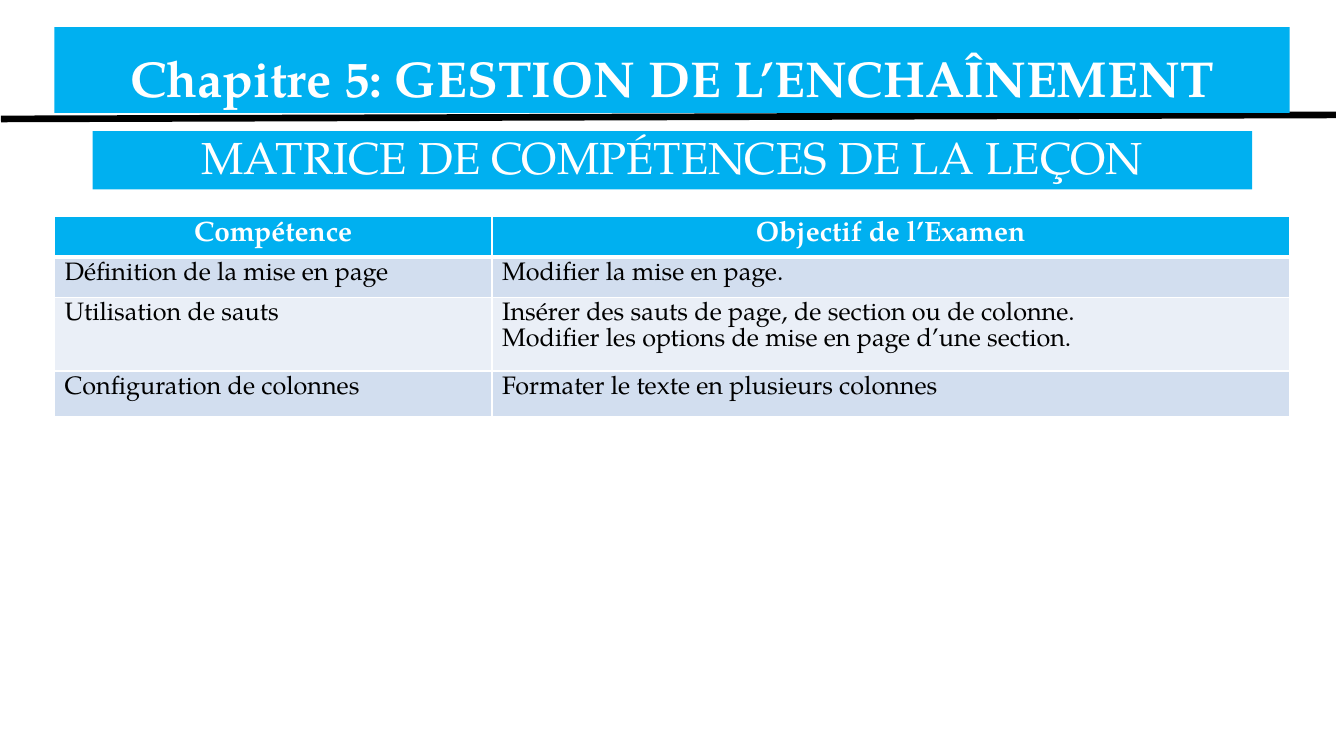
import pptx
import pptx.dml.color
import pptx.enum.shapes
import pptx.enum.text
import pptx.oxml
import pptx.oxml.ns
import pptx.oxml.xmlchemy
import pptx.util
from pptx.util import Inches

FONT = "TeX Gyre Pagella"
COLOURS = {
    "accent": "00B0F0",
    "white": "FFFFFF",
    "black": "000000",
    "odd row": "D2DEEF",
    "even row": "EAEFF7",
}
COLUMN_WIDTHS = [4.34, 7.91]
ROW_HEIGHTS = [0.4, 0.4, 0.73, 0.45]
SKILLS = [
    ("Compétence", "Objectif de l’Examen"),
    ("Définition de la mise en page", "Modifier la mise en page."),
    ("Utilisation de sauts",
     "Insérer des sauts de page, de section ou de colonne.\n"
     "Modifier les options de mise en page d’une section."),
    ("Configuration de colonnes", "Formater le texte en plusieurs colonnes"),
]


def rgb(name):
    return pptx.dml.color.RGBColor.from_string(COLOURS[name])


def paint(item, colour):
    item.fill.solid()
    item.fill.fore_color.rgb = rgb(colour)


def write(frame, text, size, colour, bold=False, align="CENTER", spacing=None):
    frame.text = text
    for para in frame.paragraphs:
        para.alignment = pptx.enum.text.PP_ALIGN[align]
        para.line_spacing = spacing
        for span in para.runs:
            span.font.name = FONT
            span.font.size = pptx.util.Pt(size)
            span.font.bold = bold
            span.font.color.rgb = rgb(colour)


def add_banner(page, left, top, width, height, text, size, bold, anchor):
    box = page.shapes.add_shape(
        pptx.enum.shapes.MSO_SHAPE.RECTANGLE,
        Inches(left), Inches(top), Inches(width), Inches(height))
    box.shadow.inherit = False
    paint(box, "accent")
    box.line.fill.background()
    box.text_frame.word_wrap = True
    box.text_frame.vertical_anchor = pptx.enum.text.MSO_ANCHOR[anchor]
    write(box.text_frame, text, size, "white", bold, spacing=0.9)


def add_rule(page, start, end):
    rule = page.shapes.add_connector(
        pptx.enum.shapes.MSO_CONNECTOR.STRAIGHT,
        *(Inches(value) for value in start + end))
    rule.line.color.rgb = rgb("black")
    rule.line.width = pptx.util.Pt(4.75)
    properties = rule._element.spPr
    properties.append(pptx.oxml.xmlchemy.OxmlElement("a:effectLst"))


def set_borders(cell, widths):
    """Draw white cell borders, with widths in points keyed by side (L, R, T, B)."""
    properties = cell._tc.get_or_add_tcPr()
    for position, (side, width) in enumerate(widths.items()):
        border = pptx.oxml.parse_xml(
            f'<a:ln{side} {pptx.oxml.ns.nsdecls("a")} w="{pptx.util.Pt(width)}">'
            f'<a:solidFill><a:srgbClr val="{COLOURS["white"]}"/></a:solidFill>'
            f'</a:ln{side}>')
        properties.insert(position, border)


def add_skill_table(page, left, top):
    table = page.shapes.add_table(
        len(SKILLS), len(COLUMN_WIDTHS), Inches(left), Inches(top),
        Inches(sum(COLUMN_WIDTHS)), Inches(sum(ROW_HEIGHTS))).table
    for column, width in zip(table.columns, COLUMN_WIDTHS):
        column.width = Inches(width)
    for index, (row, texts) in enumerate(zip(table.rows, SKILLS)):
        row.height = Inches(ROW_HEIGHTS[index])
        header = index == 0
        for cell, text in zip(row.cells, texts):
            if header:
                paint(cell, "accent")
                write(cell.text_frame, text, 20, "white", bold=True)
            else:
                paint(cell, "odd row" if index % 2 else "even row")
                write(cell.text_frame, text, 18, "black", align="JUSTIFY")
            set_borders(cell, {"L": 1, "R": 1, "T": 3 if index == 1 else 1,
                               "B": 3 if header else 1})


def main():
    deck = pptx.Presentation()
    deck.slide_width, deck.slide_height = Inches(13.33), Inches(7.5)
    page = deck.slides.add_slide(deck.slide_layouts[6])
    add_rule(page, (0.01, 1.18), (13.25, 1.14))
    add_banner(page, 0.54, 0.27, 12.25, 0.85,
               "Chapitre 5: GESTION DE L’ENCHAÎNEMENT", 36, True, "BOTTOM")
    add_banner(page, 0.92, 1.3, 11.5, 0.58,
               "MATRICE DE COMPÉTENCES DE LA LEÇON", 32, False, "MIDDLE")
    add_skill_table(page, 0.54, 2.15)
    deck.save("out.pptx")


if __name__ == "__main__":
    main()
